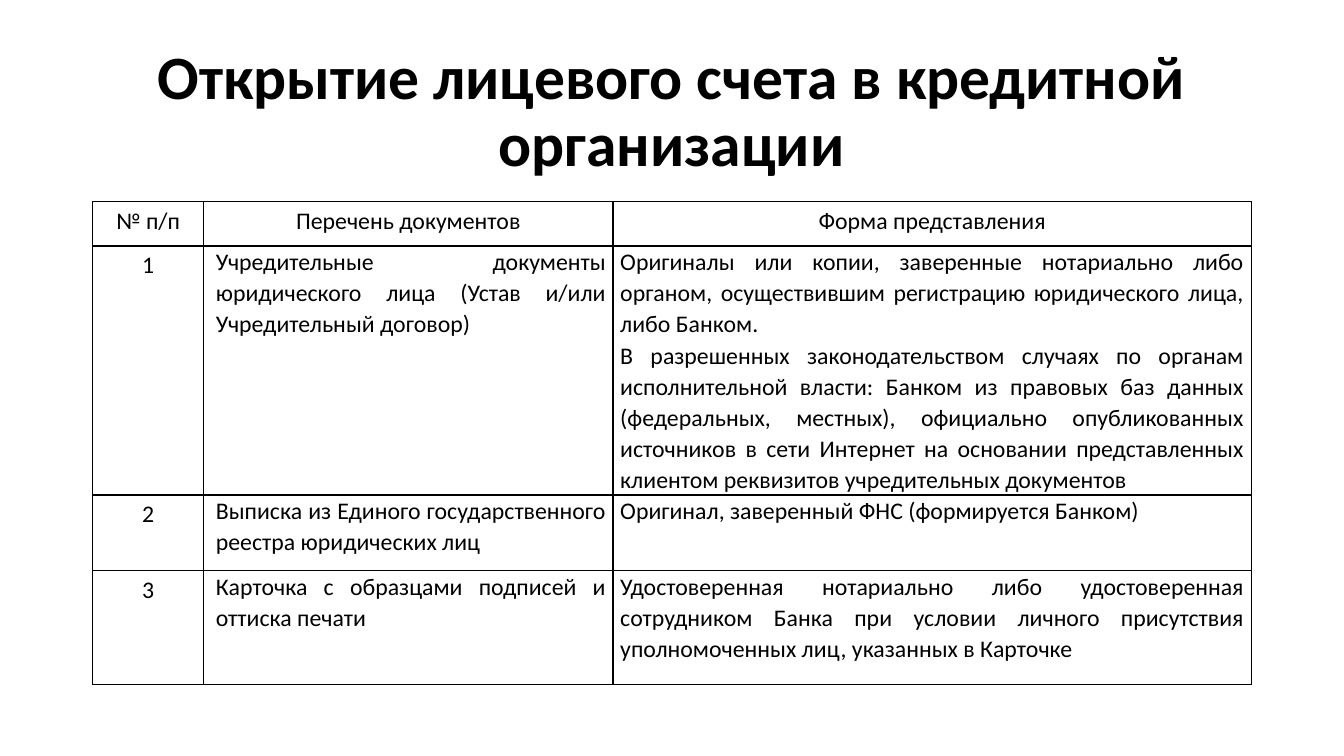
from lxml.etree import SubElement
from pptx import Presentation
from pptx.dml.color import RGBColor
from pptx.enum.text import MSO_ANCHOR as Anchor, MSO_AUTO_SIZE as AutoSize, PP_ALIGN as Align
from pptx.oxml.ns import qn
from pptx.util import Cm, Pt

COLORS = {"text": "000000", "border": "000000"}
TITLE = "Открытие лицевого счета в кредитной организации"
HEADERS = ["№ п/п", "Перечень документов", "Форма представления"]
DOCUMENTS = [
    (
        "Учредительные документы юридического лица (Устав и/или Учредительный договор)",
        "Оригиналы или копии, заверенные нотариально либо органом, осуществившим "
        "регистрацию юридического лица, либо Банком.\n"
        "В разрешенных законодательством случаях по органам исполнительной власти: "
        "Банком из правовых баз данных (федеральных, местных), официально опубликованных "
        "источников в сети Интернет на основании представленных клиентом реквизитов "
        "учредительных документов",
    ),
    (
        "Выписка из Единого государственного реестра юридических лиц",
        "Оригинал, заверенный ФНС (формируется Банком)",
    ),
    (
        "Карточка с образцами подписей и оттиска печати",
        "Удостоверенная нотариально либо удостоверенная сотрудником Банка при условии "
        "личного присутствия уполномоченных лиц, указанных в Карточке",
    ),
]
COLUMN_WIDTHS = [2.79, 10.32, 16.08]
ROW_HEIGHTS = [1.12, 5.74, 1.9, 2.87]
BODY_CELL = {"margin_left": Cm(0.18), "margin_right": Cm(0.18), "margin_top": 0, "margin_bottom": 0}
CENTERED = {"alignment": Align.CENTER}
JUSTIFIED = {"alignment": Align.JUSTIFY, "line_spacing": 1.07}


def apply_format(target, values):
    for name, value in values.items():
        setattr(target, name, value)


def format_text(text_frame, paragraph_format, font_format):
    for paragraph in text_frame.paragraphs:
        apply_format(paragraph, paragraph_format)
        for run in paragraph.runs:
            apply_format(run.font, {"name": "Calibri", **font_format})
            run.font.color.rgb = RGBColor.from_string(COLORS["text"])


presentation = Presentation()
apply_format(presentation, {"slide_width": Cm(33.87), "slide_height": Cm(19.05)})
slide = presentation.slides.add_slide(presentation.slide_layouts[5])

title = slide.shapes.title
apply_format(title, {"left": Cm(2.33), "top": Cm(1.01), "width": Cm(29.21), "height": Cm(3.68)})
title.text_frame.text = TITLE
apply_format(title.text_frame, {
    "word_wrap": True, "auto_size": AutoSize.NONE, "vertical_anchor": Anchor.MIDDLE,
})
format_text(title.text_frame, {**CENTERED, "line_spacing": 0.9}, {"size": Pt(44), "bold": True})

rows = [HEADERS] + [(str(number), *texts) for number, texts in enumerate(DOCUMENTS, 1)]
table = slide.shapes.add_table(
    len(rows), len(HEADERS), Cm(2.34), Cm(5.08), Cm(sum(COLUMN_WIDTHS)), Cm(sum(ROW_HEIGHTS))
).table
apply_format(table, {"first_row": False, "horz_banding": False})
for column, width in zip(table.columns, COLUMN_WIDTHS):
    column.width = Cm(width)

for row_index, (texts, height) in enumerate(zip(rows, ROW_HEIGHTS)):
    table.rows[row_index].height = Cm(height)
    for column_index, text in enumerate(texts):
        cell = table.cell(row_index, column_index)
        cell.text = text
        is_body = row_index > 0 and column_index > 0
        if is_body:
            apply_format(cell, BODY_CELL)
        format_text(cell.text_frame, JUSTIFIED if is_body else CENTERED, {"size": Pt(17)})
        if is_body and column_index == 1:
            for paragraph in cell.text_frame.paragraphs:
                paragraph._p.get_or_add_pPr().set("marL", str(Cm(0.13)))
        properties = cell._tc.get_or_add_tcPr()
        for side in ("lnL", "lnR", "lnT", "lnB"):
            line = SubElement(properties, qn(f"a:{side}"), w=str(Pt(1)))
            line_fill = SubElement(line, qn("a:solidFill"))
            SubElement(line_fill, qn("a:srgbClr"), val=COLORS["border"])
        cell.fill.background()

presentation.save("out.pptx")
